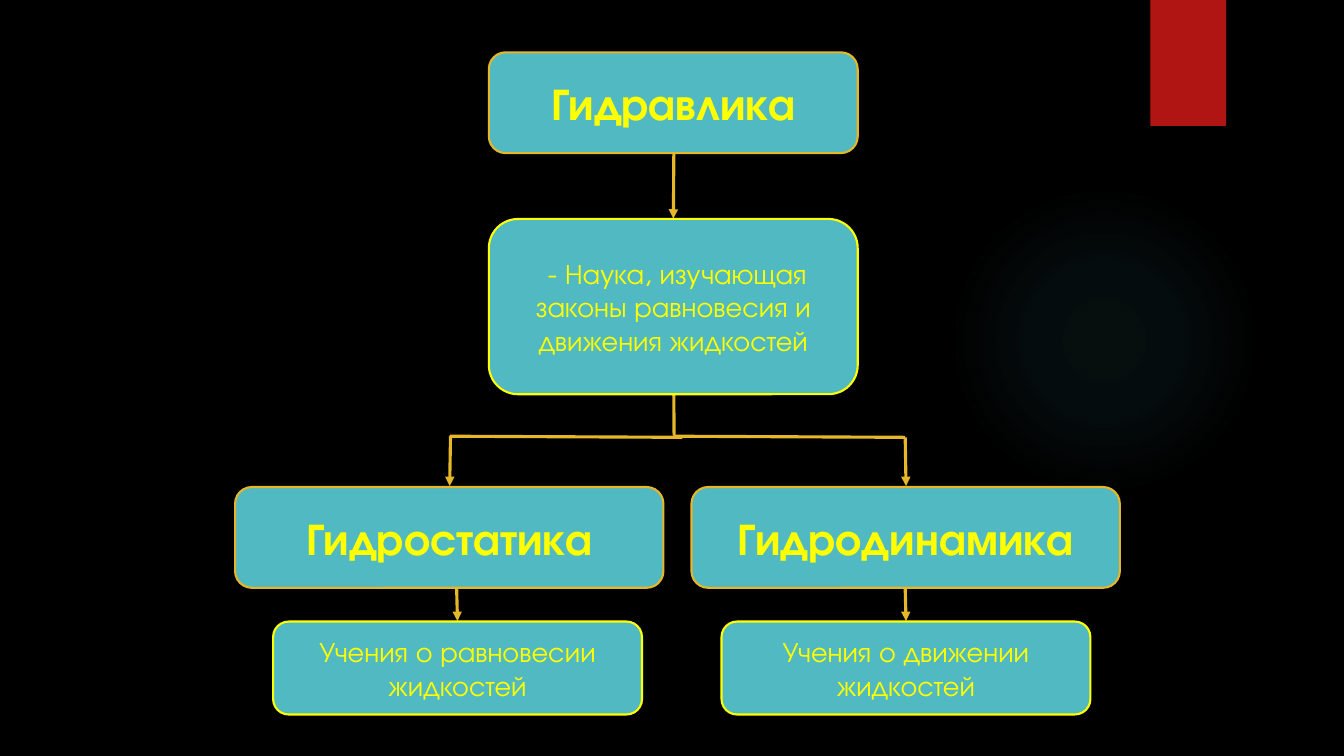
from dataclasses import dataclass

import pptx
import pptx.dml.color
import pptx.enum.shapes
import pptx.enum.text
import pptx.oxml
import pptx.oxml.ns
import pptx.util

Pt = pptx.util.Pt
RGBColor = pptx.dml.color.RGBColor
SHAPES = pptx.enum.shapes.MSO_SHAPE

BLACK = RGBColor(0x00, 0x00, 0x00)
TEAL = RGBColor(0x50, 0xB9, 0xC1)
GOLD = RGBColor(0xE6, 0xB7, 0x29)
YELLOW = RGBColor(0xFF, 0xFF, 0x00)
RED = RGBColor(0xB0, 0x15, 0x13)

FONT = "TeX Gyre Adventor"
TERM_FORMAT = {"name": FONT, "size": Pt(32), "bold": True}
MEANING_FORMAT = {"name": FONT, "size": Pt(20), "bold": False}
GLOW_STOPS = ((0, 7), (36, 6), (69, 0))  # position and opacity, percent


@dataclass
class Node:
    text: str
    left: float
    top: float
    width: float
    height: float
    outline: RGBColor
    font_format: dict


@dataclass
class Link:
    start: tuple[float, float]
    end: tuple[float, float]
    arrow: bool = True


def term(text: str, left: float, top: float, width: float) -> Node:
    return Node(text, left, top, width, 72, GOLD, TERM_FORMAT)


def meaning(text: str, left: float, top: float, height: float) -> Node:
    return Node(text, left, top, 263.5, height, YELLOW, MEANING_FORMAT)


NODES = [
    term("Гидравлика", 349.2, 37.4, 263.5),
    meaning(" - Наука, изучающая законы равновесия и движения жидкостей", 349.2, 156.4, 125.2),
    term("Гидродинамика", 493.9, 347.9, 306),
    term("Гидростатика", 167.9, 347.9, 306),
    meaning("Учения о равновесии жидкостей", 195.1, 444, 66.4),
    meaning("Учения о движении жидкостей", 515.4, 444, 66.4),
]

LINKS = [
    Link((481.5, 84.2), (481, 156.2)),
    Link((481.5, 311), (481, 236.9)),
    Link((481, 311.6), (646.6, 312.4), arrow=False),
    Link((646.6, 312.4), (647.2, 347.2)),
    Link((321.2, 311.6), (487.4, 312.4), arrow=False),
    Link((321.8, 311.6), (321.2, 347.2)),
    Link((646.6, 420.4), (647.2, 443.6)),
    Link((326.2, 420.4), (326.8, 443.6)),
]


def add_plain_shape(page, kind, left: float, top: float, width: float, height: float):
    shape = page.shapes.add_shape(kind, Pt(left), Pt(top), Pt(width), Pt(height))
    shape.shadow.inherit = False
    shape.line.fill.background()
    return shape


def add_glow(page) -> None:
    glow = add_plain_shape(page, SHAPES.OVAL, 677.6, 131.8, 221.8, 221.8)
    glow.fill.background()
    stops = "".join(
        f'<a:gs pos="{position * 1000}"><a:srgbClr val="{TEAL}">'
        f'<a:alpha val="{opacity * 1000}"/></a:srgbClr></a:gs>'
        for position, opacity in GLOW_STOPS
    )
    gradient = pptx.oxml.parse_xml(
        f'<a:gradFill {pptx.oxml.ns.nsdecls("a")} rotWithShape="1">'
        f'<a:gsLst>{stops}</a:gsLst><a:path path="circle">'
        '<a:fillToRect l="50000" t="50000" r="50000" b="50000"/></a:path></a:gradFill>'
    )
    properties = glow.element.spPr
    properties.replace(properties.find(pptx.oxml.ns.qn("a:noFill")), gradient)


def add_link(page, link: Link) -> None:
    connector = page.shapes.add_connector(
        pptx.enum.shapes.MSO_CONNECTOR.STRAIGHT,
        *(Pt(length) for length in link.start + link.end),
    )
    connector.line.color.rgb = GOLD
    connector.line.width = Pt(2.25)
    namespace = pptx.oxml.ns.nsdecls("a")
    if link.arrow:
        connector.line._get_or_add_ln().append(
            pptx.oxml.parse_xml(f'<a:tailEnd {namespace} type="triangle"/>')
        )
    connector.element.spPr.append(pptx.oxml.parse_xml(f"<a:effectLst {namespace}/>"))


def add_node(page, node: Node) -> None:
    box = add_plain_shape(
        page, SHAPES.ROUNDED_RECTANGLE, node.left, node.top, node.width, node.height
    )
    box.fill.solid()
    box.fill.fore_color.rgb = TEAL
    box.line.color.rgb = node.outline
    box.line.width = Pt(1.5)
    frame = box.text_frame
    frame.word_wrap = True
    frame.vertical_anchor = pptx.enum.text.MSO_ANCHOR.MIDDLE
    para = frame.paragraphs[0]
    para.alignment = pptx.enum.text.PP_ALIGN.CENTER
    span = para.add_run()
    span.text = node.text
    for name, value in node.font_format.items():
        setattr(span.font, name, value)
    span.font.color.rgb = YELLOW


def main() -> None:
    deck = pptx.Presentation()
    deck.slide_width, deck.slide_height = Pt(960), Pt(540)
    page = deck.slides.add_slide(deck.slide_layouts[6])

    # Background, glow and red tab
    page.background.fill.solid()
    page.background.fill.fore_color.rgb = BLACK
    add_glow(page)
    tab = add_plain_shape(page, SHAPES.RECTANGLE, 821.8, 0, 54, 90)
    tab.fill.solid()
    tab.fill.fore_color.rgb = RED

    # Tree: links run beneath the boxes
    for link in LINKS:
        add_link(page, link)
    for node in NODES:
        add_node(page, node)

    deck.save("out.pptx")


if __name__ == "__main__":
    main()
